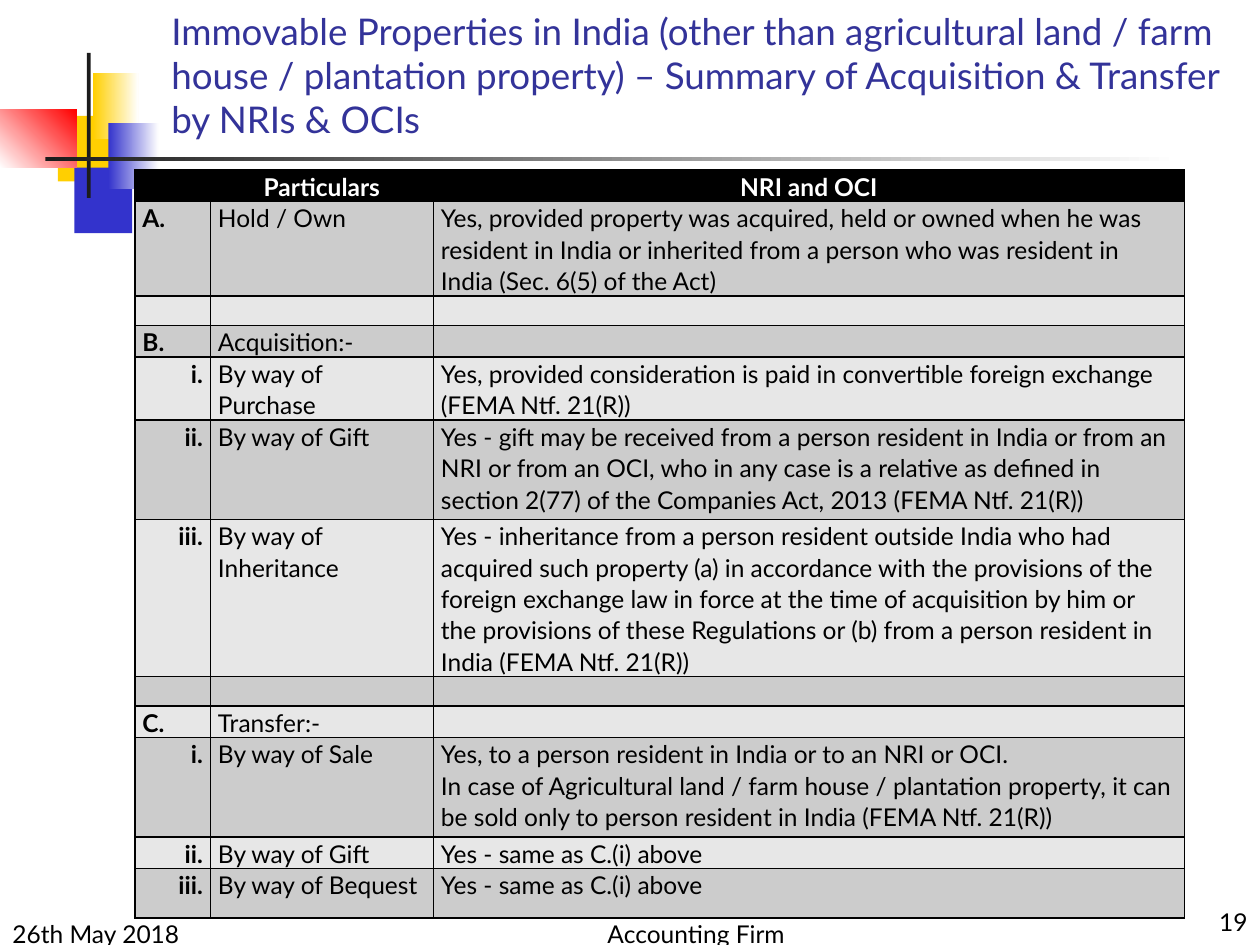
import pptx
import pptx.util
import pptx.dml.color
import pptx.enum.shapes
import pptx.enum.text
import pptx.oxml.ns
from lxml import etree

Inches, Pt = pptx.util.Inches, pptx.util.Pt
ALIGN = pptx.enum.text.PP_ALIGN
ANCHOR = pptx.enum.text.MSO_ANCHOR
qn = pptx.oxml.ns.qn

FONT = "Lato"
TITLE = ("Immovable Properties in India (other than agricultural land / farm house / "
         "plantation property) – Summary of Acquisition & Transfer by NRIs & OCIs")

# left, top, width, height, colours (two make a gradient), gradient angle
DECORATION = [
    (0.46, 0.92, 0.48, 0.52, ["FFCF01"], 0),
    (0.59, 1.33, 0.46, 0.52, ["3333CC"], 0),
    (0.74, 0.58, 0.36, 0.52, ["FFCF01", "FFFFFF"], 0),
    (0.86, 0.98, 0.40, 0.52, ["3333CC", "FFFFFF"], 0),
    (0, 0.87, 0.61, 0.46, ["FFFFFF", "FF0000"], 45),
    (0.69, 0.42, 0.03, 1.15, ["1C1C1C"], 0),
    (0.36, 1.25, 9, 0.03, ["1C1C1C", "FFFFFF"], 0),
]

# text, left, top, width, alignment
FOOTERS = [
    ("26th May 2018", 0, 7.08, 2.08, ALIGN.LEFT),
    ("Accounting Firm", 3.94, 7.08, 3.17, ALIGN.CENTER),
    ("19", 7.92, 6.98, 2.08, ALIGN.RIGHT),
]

COLUMN_WIDTHS = [0.6, 1.77, 5.96]
# row height, then the three cells
ROWS = [
    (0.23, "", "Particulars", "NRI and OCI"),
    (0.71, "A.", "Hold / Own",
     "Yes, provided property was acquired, held or owned when he was resident in India "
     "or inherited from a person who was resident in India (Sec. 6(5) of the Act)"),
    (0.23, "", "", ""),
    (0.23, "B.", "Acquisition:-", ""),
    (0.47, "i.", "By way of Purchase",
     "Yes, provided consideration is paid in convertible foreign exchange "
     "(FEMA Ntf. 21(R))"),
    (0.79, "ii.", "By way of Gift",
     "Yes - gift may be received from a person resident in India or from an NRI or from "
     "an OCI, who in any case is a relative as defined in section 2(77) of the Companies "
     "Act, 2013 (FEMA Ntf. 21(R))"),
    (1.2, "iii.", "By way of Inheritance",
     "Yes - inheritance from a person resident outside India who had acquired such "
     "property (a) in accordance with the provisions of the foreign exchange law in force "
     "at the time of acquisition by him or the provisions of these Regulations or (b) from "
     "a person resident in India (FEMA Ntf. 21(R))"),
    (0.23, "", "", ""),
    (0.23, "C.", "Transfer:-", ""),
    (0.79, "i.", "By way of Sale",
     "Yes, to a person resident in India or to an NRI or OCI.\n"
     "In case of Agricultural land / farm house / plantation property, it can be sold "
     "only to person resident in India (FEMA Ntf. 21(R))"),
    (0.23, "ii.", "By way of Gift", "Yes - same as C.(i) above"),
    (0.39, "iii.", "By way of Bequest", "Yes - same as C.(i) above"),
]


def rgb(value):
    return pptx.dml.color.RGBColor.from_string(value)


def write(frame, text, size=14, color="000000", bold=False, align=ALIGN.LEFT, spacing=None):
    """Fill a text frame, one paragraph for each line of text."""
    frame.word_wrap = True
    for index, line in enumerate(text.split("\n")):
        para = frame.add_paragraph() if index else frame.paragraphs[0]
        para.alignment = align
        if spacing:
            para.line_spacing = spacing
        if not line:
            etree.SubElement(para._p, qn("a:endParaRPr"), sz=str(size * 100))
            continue
        span = para.add_run()
        span.text = line
        span.font.name = FONT
        span.font.size = Pt(size)
        span.font.bold = bold
        span.font.color.rgb = rgb(color)


def add_block(page, left, top, width, height, colors, angle):
    block = page.shapes.add_shape(pptx.enum.shapes.MSO_SHAPE.RECTANGLE, Inches(left),
                                  Inches(top), Inches(width), Inches(height))
    block.shadow.inherit = False
    block.line.fill.background()
    if len(colors) == 1:
        block.fill.solid()
        block.fill.fore_color.rgb = rgb(colors[0])
    else:
        block.fill.gradient()
        block.fill.gradient_angle = angle
        for stop, color in zip(block.fill.gradient_stops, colors):
            stop.color.rgb = rgb(color)


def add_borders(cell):
    properties = cell._tc.get_or_add_tcPr()
    for side in ("a:lnL", "a:lnR", "a:lnT", "a:lnB"):
        line = etree.SubElement(properties, qn(side), w=str(Pt(1)))
        fill = etree.SubElement(line, qn("a:solidFill"))
        etree.SubElement(fill, qn("a:srgbClr"), val="000000")


def add_summary_table(page):
    heights = [row[0] for row in ROWS]
    table = page.shapes.add_table(len(ROWS), len(COLUMN_WIDTHS), Inches(1.07), Inches(1.35),
                                  Inches(sum(COLUMN_WIDTHS)), Inches(sum(heights))).table
    for column, width in zip(table.columns, COLUMN_WIDTHS):
        column.width = Inches(width)
    for r, (height, *texts) in enumerate(ROWS):
        table.rows[r].height = Inches(height)
        header = r == 0
        background = "000000" if header else ("E7E7E7", "CCCCCC")[r % 2]
        for c, text in enumerate(texts):
            cell = table.cell(r, c)
            cell.margin_left = cell.margin_right = Inches(0.06)
            cell.margin_top = cell.margin_bottom = 0
            add_borders(cell)
            cell.fill.solid()
            cell.fill.fore_color.rgb = rgb(background)
            align = ALIGN.LEFT
            if header:
                align = ALIGN.CENTER
            elif c == 0 and text.startswith("i"):
                align = ALIGN.RIGHT
            write(cell.text_frame, text, color="FFFFFF" if header else "000000",
                  bold=header or c == 0, align=align, spacing=1.07)


def main():
    deck = pptx.Presentation()
    deck.slide_width, deck.slide_height = Inches(10), Inches(7.5)
    page = deck.slides.add_slide(deck.slide_layouts[5])

    for block in DECORATION:
        add_block(page, *block)

    title = page.shapes.title
    title.left, title.top = Inches(1.26), Inches(0)
    title.width, title.height = Inches(8.52), Inches(1.17)
    title.text_frame.auto_size = pptx.enum.text.MSO_AUTO_SIZE.NONE
    title.text_frame.vertical_anchor = ANCHOR.BOTTOM
    write(title.text_frame, TITLE, size=21, color="333399")

    for text, left, top, width, align in FOOTERS:
        box = page.shapes.add_textbox(Inches(left), Inches(top), Inches(width), Inches(0.5))
        box.text_frame.vertical_anchor = ANCHOR.BOTTOM
        write(box.text_frame, text, align=align)

    add_summary_table(page)
    deck.save("out.pptx")


if __name__ == "__main__":
    main()
